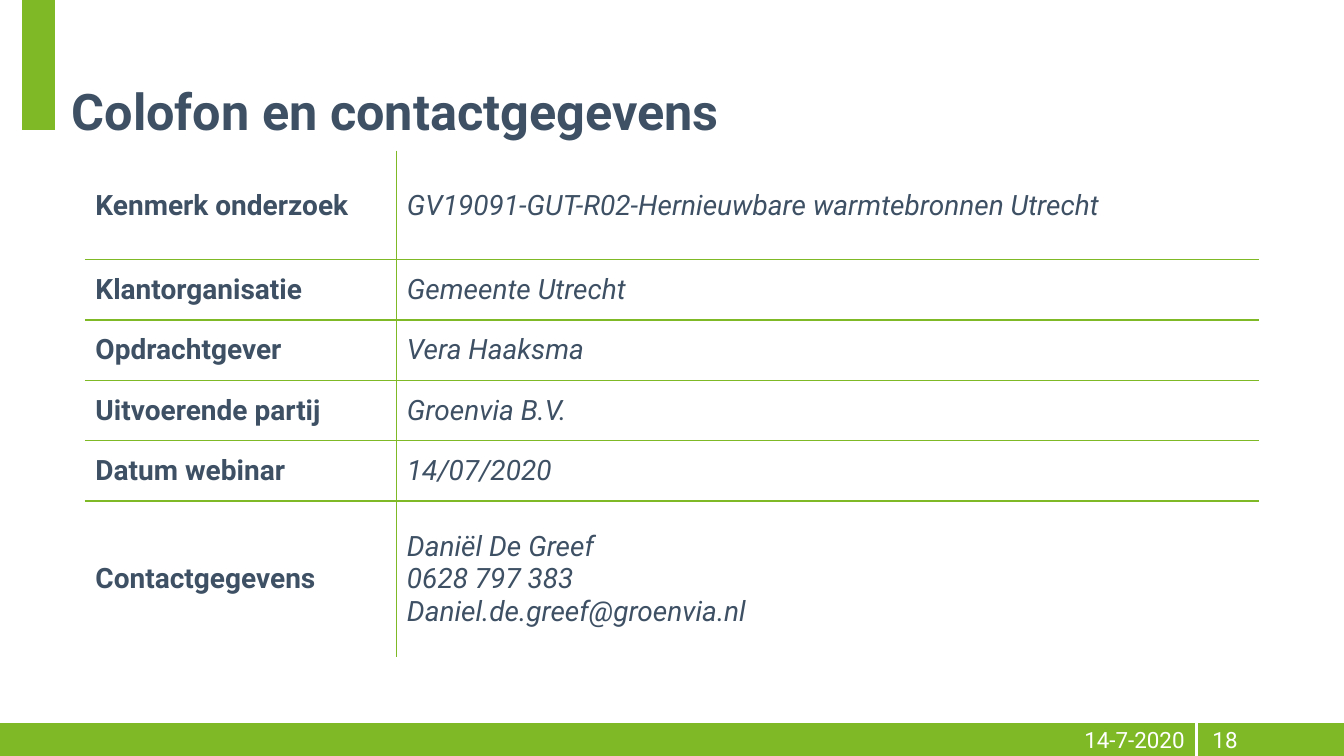
"""Build the colophon and contact details slide."""
from lxml import etree
from pptx import Presentation
from pptx.dml.color import RGBColor
from pptx.enum.shapes import MSO_CONNECTOR
from pptx.enum.text import MSO_ANCHOR, MSO_AUTO_SIZE, PP_ALIGN
from pptx.oxml.ns import qn
from pptx.util import Pt

STRAIGHT = MSO_CONNECTOR.STRAIGHT
MIDDLE, BOTTOM = MSO_ANCHOR.MIDDLE, MSO_ANCHOR.BOTTOM
LEFT = PP_ALIGN.LEFT
NO_AUTOFIT = MSO_AUTO_SIZE.NONE

COLORS = {"green": "7FBA26", "navy": "3D5064", "white": "FFFFFF"}
WIDTH, HEIGHT = 960, 540
TITLE_ONLY = 5
BAR_WEIGHT = 23.5
BAR_MIDDLE = 528.5
COLUMN_WIDTHS = (222.5, 615.5)
DETAILS = (
    ("Kenmerk onderzoek", "GV19091-GUT-R02-Hernieuwbare warmtebronnen Utrecht", 77.5),
    ("Klantorganisatie", "Gemeente Utrecht", 43.1),
    ("Opdrachtgever", "Vera Haaksma", 43.1),
    ("Uitvoerende partij", "Groenvia B.V.", 43.1),
    ("Datum webinar", "14/07/2020", 43.1),
    ("Contactgegevens", "Daniël De Greef\n0628 797 383\nDaniel.de.greef@groenvia.nl", 112),
)


class SlideBuilder:
    """Hold the style and the current slide, and add elements to it."""

    def __init__(self, slide, font_name):
        self.slide = slide
        self.font_name = font_name

    def color(self, name):
        return RGBColor.from_string(COLORS[name])

    def fill_text(self, text_frame, text, size, color, bold=False, italic=False):
        text_frame.text = text
        for paragraph in text_frame.paragraphs:
            paragraph.alignment = LEFT
            font = paragraph.font
            font.name, font.size = self.font_name, Pt(size)
            font.bold, font.italic = bold, italic
            font.color.rgb = self.color(color)

    def title(self, text, left, top, width, height):
        shape = self.slide.shapes.title
        shape.left, shape.top = Pt(left), Pt(top)
        shape.width, shape.height = Pt(width), Pt(height)
        frame = shape.text_frame
        frame.auto_size, frame.vertical_anchor = NO_AUTOFIT, BOTTOM
        self.fill_text(frame, text, 36, "navy", bold=True)
        frame.paragraphs[0].line_spacing = 0.9

    def text(self, text, left, top, width, height):
        shape = self.slide.shapes.add_textbox(Pt(left), Pt(top), Pt(width), Pt(height))
        frame = shape.text_frame
        frame.word_wrap, frame.vertical_anchor = True, MIDDLE
        self.fill_text(frame, text, 16, "white")

    def line(self, start, end, color, weight):
        points = [Pt(value) for value in (*start, *end)]
        connector = self.slide.shapes.add_connector(STRAIGHT, *points)
        connector.line.color.rgb = self.color(color)
        connector.line.width = Pt(weight)
        etree.SubElement(connector._element.spPr, qn("a:effectLst"))

    def border(self, cell, side):
        properties = cell._tc.get_or_add_tcPr()
        line = etree.SubElement(properties, qn(f"a:ln{side}"), w=str(Pt(1)))
        fill = etree.SubElement(line, qn("a:solidFill"))
        etree.SubElement(fill, qn("a:srgbClr"), val=COLORS["green"])

    def table(self, rows, left, top, column_widths):
        heights = [height for *_, height in rows]
        table = self.slide.shapes.add_table(
            len(rows), len(column_widths), Pt(left), Pt(top),
            Pt(sum(column_widths)), Pt(sum(heights))).table
        table.first_row = table.horz_banding = False
        for column, width in zip(table.columns, column_widths):
            column.width = Pt(width)
        for row_index, (*texts, height) in enumerate(rows):
            table.rows[row_index].height = Pt(height)
            for column_index, text in enumerate(texts):
                cell = table.cell(row_index, column_index)
                inner_sides = {
                    "L": column_index > 0,
                    "R": column_index < len(texts) - 1,
                    "T": row_index > 0,
                    "B": row_index < len(rows) - 1,
                }
                for side, is_inner in inner_sides.items():
                    if is_inner:
                        self.border(cell, side)
                cell.fill.background()
                cell.vertical_anchor = MIDDLE
                is_label = column_index == 0
                self.fill_text(cell.text_frame, text, 20, "navy",
                               bold=is_label, italic=not is_label)


def main():
    presentation = Presentation()
    presentation.slide_width, presentation.slide_height = Pt(WIDTH), Pt(HEIGHT)
    slide = presentation.slides.add_slide(presentation.slide_layouts[TITLE_ONLY])
    builder = SlideBuilder(slide, "Roboto")
    builder.line((WIDTH, BAR_MIDDLE), (0, BAR_MIDDLE), "green", BAR_WEIGHT)
    builder.line((27.5, 0), (27.5, 93), "green", BAR_WEIGHT)
    builder.line((854.5, 516), (854.5, HEIGHT), "white", 2.25)
    builder.title("Colofon en contactgegevens", 44, 24, 872.5, 80.5)
    builder.text("14-7-2020", 767.5, 513.5, 192, 29)
    builder.text("18", 859, 513.5, 86.5, 29)
    builder.table(DETAILS, 61, 108, COLUMN_WIDTHS)
    presentation.save("out.pptx")


if __name__ == "__main__":
    main()
